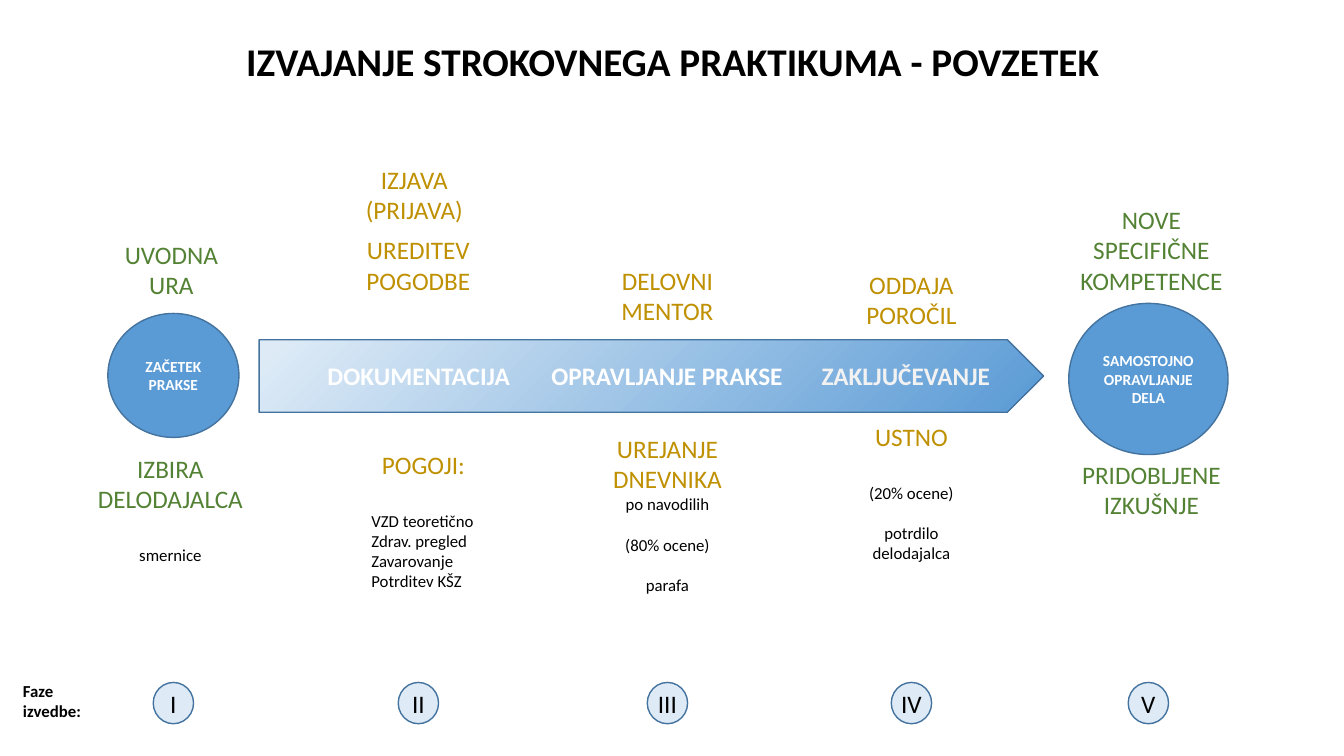
from dataclasses import dataclass

from pptx import Presentation
from pptx.dml.color import RGBColor
from pptx.enum import shapes, text
from pptx.oxml import parse_xml
from pptx.oxml.ns import nsdecls
from pptx.util import Inches, Pt


@dataclass(frozen=True)
class Theme:
    font: str = "Calibri"
    black: str = "000000"
    white: str = "FFFFFF"
    pale: str = "F2F2F2"
    green: str = "548235"
    gold: str = "BF9000"
    blue: str = "5B9BD5"
    light: str = "DEEBF7"
    edge: str = "43739E"
    title: int = 28
    head: int = 18
    body: int = 12
    node: int = 11
    gap: float = 22
    small_gap: float = 14.6


T = Theme()
MID, LEFT = text.PP_ALIGN.CENTER, text.PP_ALIGN.LEFT
KIND = shapes.MSO_SHAPE

ARROW = (2.57, 3.37, 7.78, 0.72)
STEPS = [
    (0.58, 2.1, "DOKUMENTACIJA", T.white),
    (2.8, 2.5, "OPRAVLJANJE PRAKSE", T.white),
    (5.48, 1.97, "ZAKLJUČEVANJE", T.pale),
]
NODES = [
    ((1.07, 3.11, 1.3, 1.23), "ZAČETEK PRAKSE"),
    ((10.6, 3.01, 1.58, 1.5), "SAMOSTOJNO OPRAVLJANJE DELA"),
]

# Phase: numeral, centre, heading colour, notes.
# Note: shift from centre, top, width, height, headings, body alignment, body (gap, line).
PHASES = [
    ("I", 1.72, T.green, [
        (-0.02, 2.32, 1.3, 0.71, ["UVODNA URA"], MID, []),
        (-0.03, 4.45, 1.71, 1.21, ["IZBIRA DELODAJALCA"], MID,
         [(T.gap, "smernice")]),
    ]),
    ("II", 4.15, T.gold, [
        (-0.04, 1.58, 1.23, 0.71, ["IZJAVA", "(PRIJAVA)"], MID, []),
        (0, 2.28, 1.23, 0.71, ["UREDITEV POGODBE"], MID, []),
        (0.05, 4.41, 1.23, 1.51, ["POGOJI:"], LEFT,
         [(T.gap, "VZD teoretično"), (0, "Zdrav. pregled"),
          (0, "Zavarovanje"), (0, "Potrditev KŠZ")]),
    ]),
    ("III", 6.62, T.gold, [
        (0, 2.58, 1.23, 0.71, ["DELOVNI MENTOR"], MID, []),
        (0, 4.25, 1.31, 1.72, ["UREJANJE\vDNEVNIKA"], MID,
         [(0, "po navodilih"), (T.small_gap, "(80% ocene)"),
          (T.small_gap, "parafa")]),
    ]),
    ("IV", 9.04, T.gold, [
        (0, 2.62, 1.53, 0.71, ["ODDAJA POROČIL"], MID, []),
        (0, 4.13, 1.23, 1.51, ["USTNO"], MID,
         [(T.gap, "(20% ocene)"), (T.small_gap, "potrdilo delodajalca")]),
    ]),
    ("V", 11.39, T.green, [
        (0.03, 1.98, 1.61, 1.01, ["NOVE SPECIFIČNE KOMPETENCE"], MID, []),
        (0.03, 4.51, 1.61, 0.71, ["PRIDOBLJENE IZKUŠNJE"], MID, []),
    ]),
]


def line(words, size, color, bold=False, align=MID, gap=0):
    return dict(words=words, size=size, color=color, bold=bold, align=align, gap=gap)


def write(frame, lines, **form):
    """Fill a text frame with formatted lines; form sets frame attributes."""
    for key, value in form.items():
        setattr(frame, key, value)
    for i, item in enumerate(lines):
        par = frame.add_paragraph() if i else frame.paragraphs[0]
        par.text = item["words"]
        par.alignment = item["align"]
        par.space_before = Pt(item["gap"])
        look = {"name": T.font, "size": Pt(item["size"]), "bold": item["bold"]}
        for run in par.runs:
            for key, value in look.items():
                setattr(run.font, key, value)
            run.font.color.rgb = RGBColor.from_string(item["color"])


def label(slide, box, lines):
    frame = slide.shapes.add_textbox(*map(Inches, box)).text_frame
    write(frame, lines, word_wrap=True, auto_size=text.MSO_AUTO_SIZE.SHAPE_TO_FIT_TEXT)


def outline(slide, kind, box, fill):
    shape = slide.shapes.add_shape(kind, *map(Inches, box))
    shape.shadow.inherit = False
    shape.fill.solid()
    shape.fill.fore_color.rgb = RGBColor.from_string(fill)
    shape.line.color.rgb = RGBColor.from_string(T.edge)
    shape.line.width = Pt(1)
    return shape


def heading(slide, box):
    title = slide.shapes.title
    title.left, title.top, title.width, title.height = map(Inches, box)
    write(title.text_frame,
          [line("IZVAJANJE STROKOVNEGA PRAKTIKUMA - POVZETEK", T.title, T.black, True)],
          word_wrap=True, auto_size=text.MSO_AUTO_SIZE.NONE,
          vertical_anchor=text.MSO_ANCHOR.TOP)


def shade(shape):
    """Replace the solid fill with a radial gradient from the top left corner."""
    stops = "".join(
        f'<a:gs pos="{pos}000"><a:srgbClr val="{color}"/></a:gs>'
        for pos, color in [(2, T.light), (99, T.blue), (100, T.light)])
    grad = parse_xml(
        f'<a:gradFill {nsdecls("a")} rotWithShape="1"><a:gsLst>{stops}</a:gsLst>'
        '<a:path path="circle"><a:fillToRect r="100000" b="100000"/></a:path>'
        '</a:gradFill>')
    props = shape.element.spPr
    props.replace(props.find("{*}solidFill"), grad)


def flow(slide, box):
    x, y, _, high = box
    shade(outline(slide, KIND.PENTAGON, box, T.light))
    for shift, wide, words, color in STEPS:
        label(slide, (x + shift, y + high / 2 - 0.2, wide, 0.4),
              [line(words, T.head, color, True, LEFT)])


def node(slide, box, words):
    shape = outline(slide, KIND.FLOWCHART_CONNECTOR, box, T.blue)
    write(shape.text_frame, [line(words, T.node, T.white, True)],
          word_wrap=True, vertical_anchor=text.MSO_ANCHOR.MIDDLE)


def badge(slide, box, words):
    shape = outline(slide, KIND.OVAL, box, T.light)
    write(shape.text_frame, [line(words, T.head, T.black)],
          margin_left=0, margin_right=0, margin_top=0, margin_bottom=0,
          word_wrap=False, vertical_anchor=text.MSO_ANCHOR.MIDDLE)


def phase(slide, mid, foot, numeral, tone, notes):
    """Place the notes and the badge of one phase around its centre line."""
    for shift, top, wide, high, heads, align, body in notes:
        lines = [line(words, T.head, tone) for words in heads]
        lines += [line(words, T.body, T.black, align=align, gap=gap)
                  for gap, words in body]
        label(slide, (mid + shift - wide / 2, top, wide, high), lines)
    badge(slide, (mid - 0.2, foot, 0.4, 0.41), numeral)


def main():
    deck = Presentation()
    deck.slide_width, deck.slide_height = Inches(13.33), Inches(7.5)
    slide = deck.slides.add_slide(deck.slide_layouts[5])
    heading(slide, (0.34, 0.32, 12.66, 0.57))
    flow(slide, ARROW)
    for box, words in NODES:
        node(slide, box, words)
    for numeral, mid, tone, notes in PHASES:
        phase(slide, mid, 6.77, numeral, tone, notes)
    label(slide, (0.13, 6.7, 1.1, 0.5),
          [line("Faze izvedbe:", T.body, T.black, True, LEFT)])
    deck.save("out.pptx")


if __name__ == "__main__":
    main()
